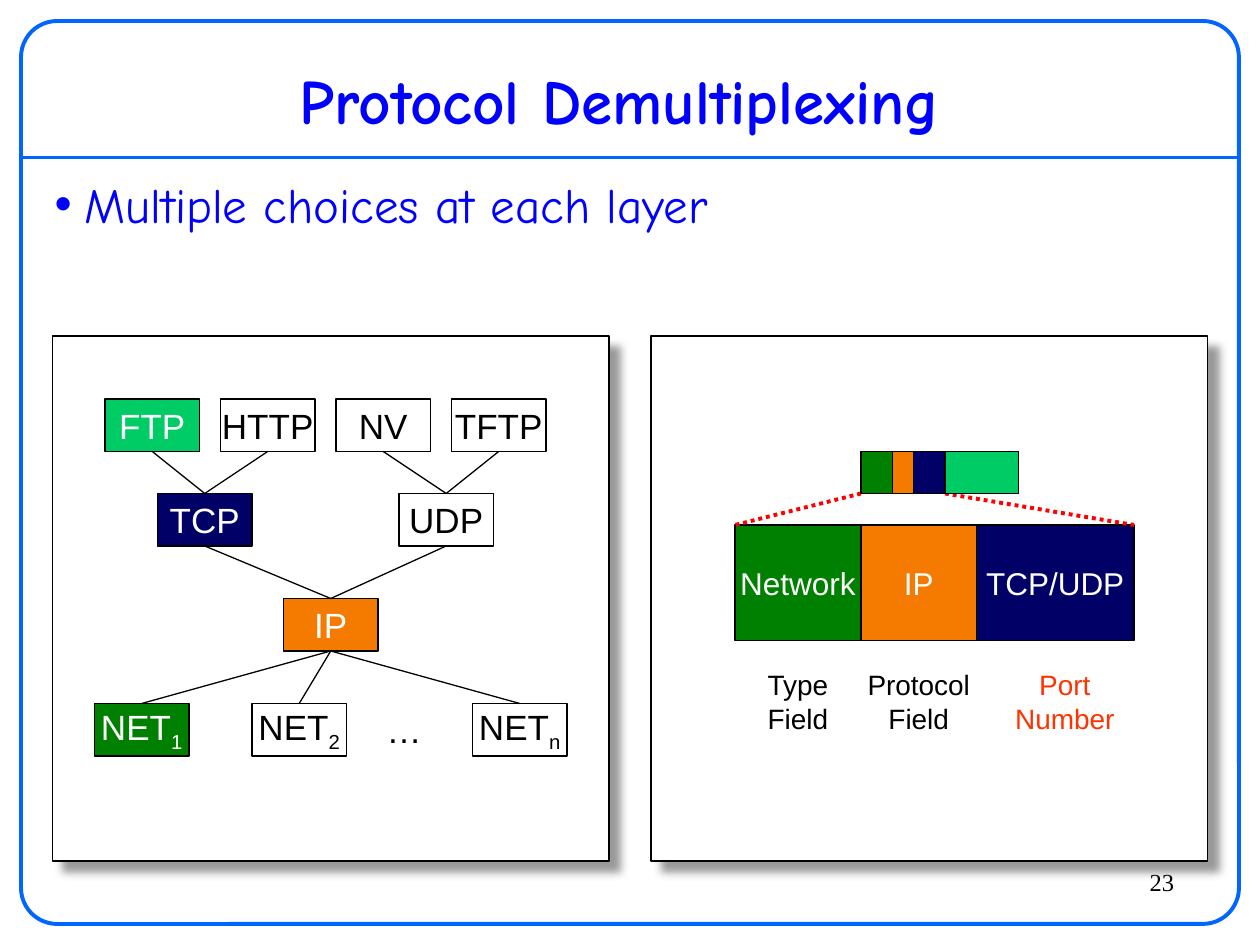
from dataclasses import dataclass

import pptx
import pptx.dml.color
import pptx.enum.dml
import pptx.enum.shapes
import pptx.enum.text
import pptx.oxml
import pptx.oxml.ns
import pptx.util

Pt = pptx.util.Pt
ALIGN = pptx.enum.text.PP_ALIGN
ANCHOR = pptx.enum.text.MSO_ANCHOR
SHAPES = pptx.enum.shapes.MSO_SHAPE
DRAWING = 'xmlns:a="http://schemas.openxmlformats.org/drawingml/2006/main"'

BLACK, WHITE, BLUE, FRAME_BLUE = "000000", "FFFFFF", "0000FF", "0066FF"
MINT, NAVY, ORANGE, GREEN = "00CC66", "000066", "F47A00", "008000"
NODE_WIDTH, NODE_HEIGHT = 54, 30


@dataclass
class Node:
    name: str
    left: float
    top: float
    fill: str = WHITE
    subscript: str = ""
    outlined: bool = True

    @property
    def center(self) -> float:
        return self.left + NODE_WIDTH / 2


@dataclass
class Segment:
    left: float
    width: float
    fill: str
    name: str = ""


@dataclass
class Label:
    text: str
    left: float
    width: float
    color: str = BLACK


APPLICATION, TRANSPORT, INTERNET, NETWORK = 228, 282, 342, 402
NODES = {
    "ftp": Node("FTP", 60, APPLICATION, MINT),
    "http": Node("HTTP", 126, APPLICATION),
    "nv": Node("NV", 192, APPLICATION),
    "tftp": Node("TFTP", 258, APPLICATION),
    "tcp": Node("TCP", 90, TRANSPORT, NAVY),
    "udp": Node("UDP", 228, TRANSPORT),
    "ip": Node("IP", 162, INTERNET, ORANGE),
    "net1": Node("NET", 54, NETWORK, GREEN, "1"),
    "net2": Node("NET", 144, NETWORK, WHITE, "2"),
    "more": Node("…", 204, NETWORK, outlined=False),
    "netn": Node("NET", 270, NETWORK, WHITE, "n"),
}
LINKS = [
    ("ftp", "tcp"), ("http", "tcp"), ("nv", "udp"), ("tftp", "udp"),
    ("tcp", "ip"), ("udp", "ip"),
    ("ip", "net1"), ("ip", "net2"), ("ip", "netn"),
]

# Packet parts overlap, so the rightmost is drawn first.
PACKET = [Segment(534, 48, MINT), Segment(516, 24, NAVY),
          Segment(498, 24, ORANGE), Segment(492, 18, GREEN)]
HEADERS = [Segment(420, 72, GREEN, "Network"), Segment(492, 66, ORANGE, "IP"),
           Segment(558, 90, NAVY, "TCP/UDP")]
LABELS = [Label("Type Field", 420, 72), Label("Protocol Field", 480, 90),
          Label("Port Number", 563, 91, "FF3300")]
PACKET_TOP, PACKET_HEIGHT = 258, 24
HEADER_TOP, HEADER_HEIGHT = 300, 66


def rgb(color: str) -> pptx.dml.color.RGBColor:
    return pptx.dml.color.RGBColor.from_string(color)


def format_spans(frame, size: float, color: str, font: str = "Arial", bold: bool = False,
                 align=ALIGN.CENTER) -> None:
    for para in frame.paragraphs:
        para.alignment = align
        for span in para.runs:
            span.font.name, span.font.size = font, Pt(size)
            span.font.bold = bold
            span.font.color.rgb = rgb(color)


def add_box(page, left: float, top: float, width: float, height: float, fill: str | None,
            line: str | None = BLACK, weight: float = 0.75, kind=SHAPES.RECTANGLE):
    box = page.shapes.add_shape(kind, Pt(left), Pt(top), Pt(width), Pt(height))
    box.shadow.inherit = False
    if fill:
        box.fill.solid()
        box.fill.fore_color.rgb = rgb(fill)
    else:
        box.fill.background()
    if line:
        box.line.color.rgb = rgb(line)
        box.line.width = Pt(weight)
    else:
        box.line.fill.background()
    return box


def add_line(page, start: tuple[float, float], end: tuple[float, float],
             color: str = BLACK, weight: float = 0.75, dotted: bool = False) -> None:
    line = page.shapes.add_connector(
        pptx.enum.shapes.MSO_CONNECTOR.STRAIGHT, *map(Pt, start + end))
    line.line.color.rgb = rgb(color)
    line.line.width = Pt(weight)
    if dotted:
        line.line.dash_style = pptx.enum.dml.MSO_LINE.ROUND_DOT
    line._element.spPr.append(pptx.oxml.parse_xml(f"<a:effectLst {DRAWING}/>"))


def add_text(page, text: str, left: float, top: float, width: float, height: float):
    box = page.shapes.add_textbox(Pt(left), Pt(top), Pt(width), Pt(height))
    box.text_frame.word_wrap = True
    box.text_frame.text = text
    return box.text_frame


def add_panel(page, left: float) -> None:
    panel = add_box(page, left, 192, 318, 300, WHITE)
    effects = panel._element.spPr.find(pptx.oxml.ns.qn("a:effectLst"))
    effects.append(pptx.oxml.parse_xml(
        f'<a:outerShdw {DRAWING} blurRad="{Pt(5)}" dist="{Pt(8.5)}" dir="2700000" '
        'algn="tl" rotWithShape="0"><a:srgbClr val="777777"><a:alpha val="75000"/>'
        '</a:srgbClr></a:outerShdw>'))


def write_in_box(box, text: str, size: float, color: str, subscript: str = "") -> None:
    frame = box.text_frame
    frame.word_wrap = False
    frame.vertical_anchor = ANCHOR.MIDDLE
    frame.text = text
    if subscript:
        span = frame.paragraphs[0].add_run()
        span.text = subscript
        span._r.get_or_add_rPr().set("baseline", "-25000")
    format_spans(frame, size, color)


def add_node(page, node: Node) -> None:
    box = add_box(page, node.left, node.top, NODE_WIDTH, NODE_HEIGHT, node.fill,
                  BLACK if node.outlined else None)
    color = BLACK if node.fill == WHITE else WHITE
    write_in_box(box, node.name, 20, color, node.subscript)


def add_segment(page, segment: Segment, top: float, height: float) -> None:
    box = add_box(page, segment.left, top, segment.width, height, segment.fill)
    if segment.name:
        write_in_box(box, segment.name, 18, WHITE)


def fill_placeholder(holder, text: str, left: float, top: float, width: float, height: float):
    holder.left, holder.top, holder.width, holder.height = map(Pt, (left, top, width, height))
    holder.text_frame.text = text
    holder.text_frame.auto_size = pptx.enum.text.MSO_AUTO_SIZE.NONE
    return holder.text_frame


def main() -> None:
    deck = pptx.Presentation()
    deck.slide_width, deck.slide_height = Pt(720), Pt(540)
    page = deck.slides.add_slide(deck.slide_layouts[1])

    title = fill_placeholder(page.shapes.title, "Protocol Demultiplexing", 24, 30, 660, 54)
    title.vertical_anchor = ANCHOR.MIDDLE
    format_spans(title, 36, BLUE, "Comic Neue", bold=True)

    body = fill_placeholder(page.placeholders[1], "Multiple choices at each layer",
                            24, 96, 678, 114)
    format_spans(body, 28, BLUE, "Comic Neue", align=ALIGN.LEFT)
    bullet = body.paragraphs[0]
    bullet.space_before = Pt(14)
    properties = bullet._p.get_or_add_pPr()
    properties.set("marL", str(Pt(17)))
    properties.set("indent", str(Pt(-17)))
    properties.append(pptx.oxml.parse_xml(f'<a:buChar {DRAWING} char="•"/>'))

    border = add_box(page, 12, 12, 696, 516, None, FRAME_BLUE, 2.25, SHAPES.ROUNDED_RECTANGLE)
    border.adjustments[0] = 0.04
    add_line(page, (12, 90), (708, 90), FRAME_BLUE, 2.25)
    number = add_text(page, "23", 606, 492, 72, 30)
    format_spans(number, 14, BLACK, "Times New Roman", align=ALIGN.RIGHT)

    for left in (372, 30):
        add_panel(page, left)

    for node in NODES.values():
        add_node(page, node)
    for upper, lower in LINKS:
        start, end = NODES[upper], NODES[lower]
        add_line(page, (start.center, start.top + NODE_HEIGHT), (end.center, end.top))

    for header in HEADERS:
        add_segment(page, header, HEADER_TOP, HEADER_HEIGHT)
    for label in LABELS:
        format_spans(add_text(page, label.text, label.left, 378, label.width, 46),
                     16, label.color)
    for packet_x, header_x in ((492, 420), (540, 648)):
        add_line(page, (packet_x, PACKET_TOP + PACKET_HEIGHT), (header_x, HEADER_TOP),
                 "FF0000", 2.25, dotted=True)
    for part in PACKET:
        add_segment(page, part, PACKET_TOP, PACKET_HEIGHT)

    deck.save("out.pptx")


if __name__ == "__main__":
    main()
